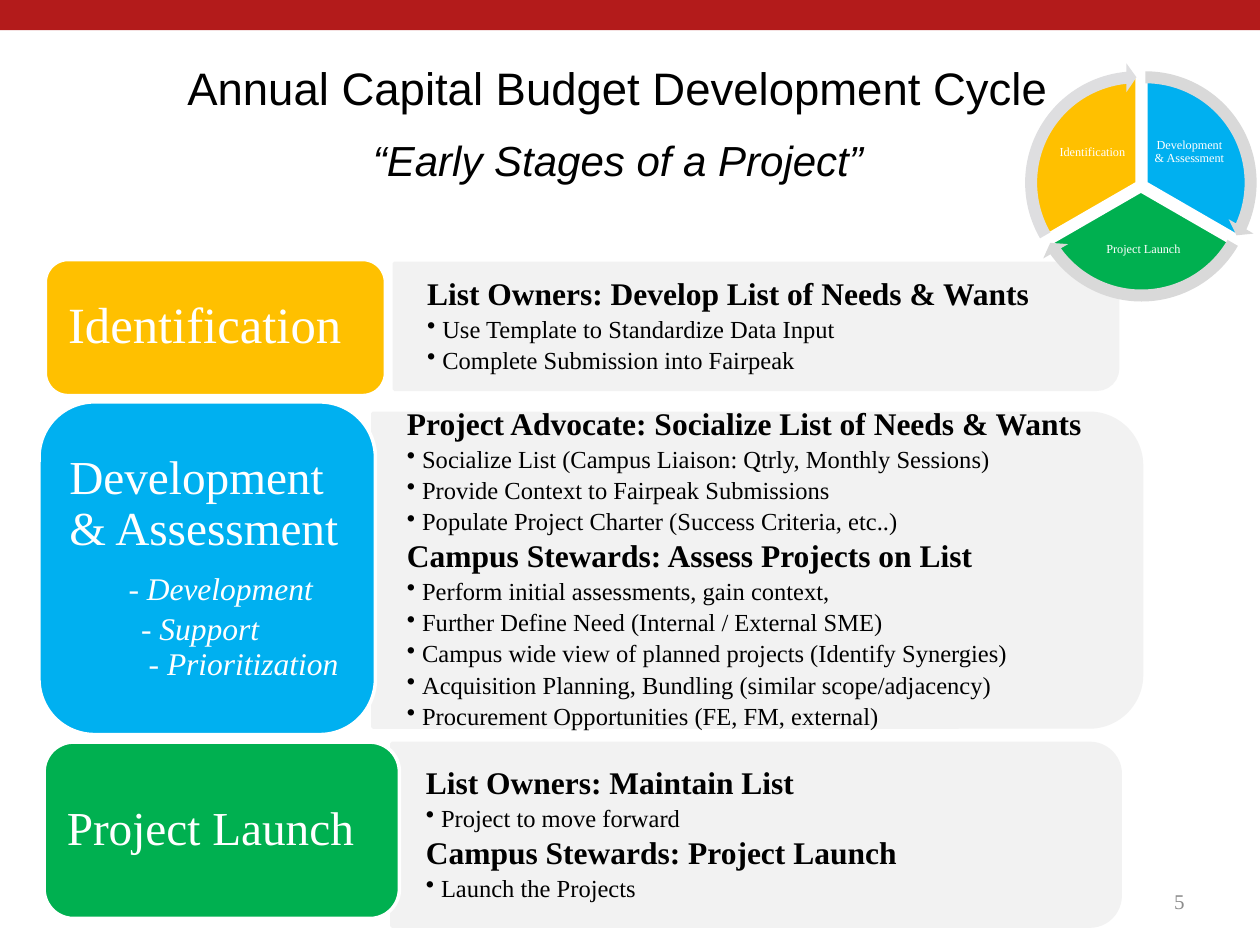
from lxml import etree
from pptx import Presentation
from pptx.dml.color import RGBColor
from pptx.enum.shapes import MSO_SHAPE
from pptx.enum.text import MSO_ANCHOR, PP_ALIGN
from pptx.oxml.ns import qn
from pptx.util import Inches, Pt

RECTANGLE = MSO_SHAPE.RECTANGLE
ROUNDED = MSO_SHAPE.ROUNDED_RECTANGLE
ROUND_SIDE = MSO_SHAPE.ROUND_2_SAME_RECTANGLE
SECTOR = MSO_SHAPE.PIE
ARC_ARROW = MSO_SHAPE.CIRCULAR_ARROW
TOP, MIDDLE = MSO_ANCHOR.TOP, MSO_ANCHOR.MIDDLE
LEFT, CENTER, RIGHT = PP_ALIGN.LEFT, PP_ALIGN.CENTER, PP_ALIGN.RIGHT

SERIF, SANS = "Times New Roman", "Arial"
WHITE, BLACK, PANEL = "FFFFFF", "000000", "F2F2F2"
YELLOW, BLUE, GREEN = "FFC000", "00B0F0", "00B050"

HEADING, BULLET = "heading", "bullet"
TEXT_STYLES = {
    HEADING: {"size": Pt(18), "bold": True},
    BULLET: {"size": Pt(14), "bold": False},
}

STAGES = [
    {
        "color": YELLOW,
        "panel": (3.13, 2.09, 5.74, 1), "details": (3.12, 2.14, 5.69, 0.9),
        "card": (0.36, 2.06, 2.7, 1.08), "label": (0.42, 2.11, 2.6, 0.97),
        "name": "Identification", "size": 29, "inset": 0.12, "steps": [],
        "lines": [
            (HEADING, "List Owners: Develop List of Needs & Wants"),
            (BULLET, "Use Template to Standardize Data Input"),
            (BULLET, "Complete Submission into Fairpeak"),
        ],
    },
    {
        "color": BLUE,
        "panel": (2.96, 3.28, 6.1, 2.49), "details": (2.96, 3.4, 5.98, 2.24),
        "card": (0.31, 3.19, 2.67, 2.64), "label": (0.44, 3.32, 2.41, 2.38),
        "name": "Development & Assessment", "size": 27, "inset": 0.11,
        "steps": [("Development", 0.47, 10), ("Support", 0.57, 3), ("Prioritization", 0.63, 1)],
        "lines": [
            (HEADING, "Project Advocate: Socialize List of Needs & Wants"),
            (BULLET, "Socialize List (Campus Liaison: Qtrly, Monthly Sessions)"),
            (BULLET, "Provide Context to Fairpeak Submissions"),
            (BULLET, "Populate Project Charter (Success Criteria, etc..)"),
            (HEADING, "Campus Stewards: Assess Projects on List"),
            (BULLET, "Perform initial assessments, gain context,"),
            (BULLET, "Further Define Need (Internal / External SME)"),
            (BULLET, "Campus wide view of planned projects (Identify Synergies)"),
            (BULLET, "Acquisition Planning, Bundling (similar scope/adjacency)"),
            (BULLET, "Procurement Opportunities (FE, FM, external)"),
        ],
    },
    {
        "color": GREEN,
        "panel": (3.11, 5.9, 5.78, 1.45), "details": (3.11, 5.97, 5.71, 1.31),
        "card": (0.35, 5.89, 2.82, 1.4), "label": (0.42, 5.96, 2.68, 1.26),
        "name": "Project Launch", "size": 27, "inset": 0.11, "steps": [],
        "lines": [
            (HEADING, "List Owners: Maintain List"),
            (BULLET, "Project to move forward"),
            (HEADING, "Campus Stewards: Project Launch"),
            (BULLET, "Launch the Projects"),
        ],
    },
]

SECTORS = [
    (8.25, 0.61, (162, 18), BLUE, "Development & Assessment", (9.14, 0.96, 0.6, 0.5)),
    (8.21, 0.67, (18, 90), GREEN, "Project Launch", (8.62, 1.76, 0.91, 0.44)),
    (8.18, 0.61, (90, 162), YELLOW, "Identification", (8.37, 0.96, 0.6, 0.5)),
]
ARROWS = [
    (8.14, 0.5, 14.73, 161.99, "D9D9D9"),
    (8.11, 0.56, 86.72, 18, "D9D9D9"),
    (8.07, 0.5, 158.73, 90, "DEDEE0"),
]


def rgb(value):
    """Turn a hex string into a colour."""
    return RGBColor.from_string(value)


def apply(target, values):
    """Set each named attribute on the target."""
    for name, value in values.items():
        setattr(target, name, value)


class SlideBuilder:
    """Hold the shared style and the current slide."""

    def __init__(self, page):
        """Keep the slide that receives the elements."""
        self.page = page
        self.line_width = Pt(2)

    def shape(self, kind, at, fill, line=None, adjustments=(), rotation=0):
        """Add a filled preset shape."""
        shape = self.page.shapes.add_shape(kind, *map(Inches, at))
        shape.shadow.inherit = False
        shape.rotation = rotation
        shape.fill.solid()
        shape.fill.fore_color.rgb = rgb(fill)
        if line:
            shape.line.color.rgb = rgb(line)
            shape.line.width = self.line_width
        else:
            shape.line.fill.background()
        for index, value in enumerate(adjustments):
            shape.adjustments[index] = value

    def panel(self, at):
        """Add a panel rounded on its right side."""
        left, top, width, height = at
        shift = (width - height) / 2
        turned = (left + shift, top - shift, height, width)
        self.shape(ROUND_SIDE, turned, PANEL, PANEL, rotation=90)

    def box(self, at, insets=(0.1, 0.05), anchor=MIDDLE):
        """Add an empty wrapping text box and return its frame."""
        frame = self.page.shapes.add_textbox(*map(Inches, at)).text_frame
        across, down = map(Inches, insets)
        apply(frame, {
            "word_wrap": True, "vertical_anchor": anchor,
            "margin_left": across, "margin_right": across,
            "margin_top": down, "margin_bottom": down,
        })
        return frame

    def para(self, frame, text, font, color=WHITE, indent=0, bullet=False, **layout):
        """Write the next paragraph of a frame."""
        first = frame.paragraphs[0]
        para = frame.add_paragraph() if first.runs else first
        apply(para, layout)
        if indent:
            properties = para._p.get_or_add_pPr()
            properties.set("marL", str(Inches(indent)))
            if bullet:
                properties.set("indent", str(-Inches(indent)))
                etree.SubElement(properties, qn("a:buChar")).set("char", "•")
        span = para.add_run()
        span.text = text
        apply(span.font, {"name": SERIF, **font})
        span.font.color.rgb = rgb(color)

    def details(self, at, lines):
        """Add the headings and bullets of a stage."""
        frame = self.box(at, (0.27, 0.14))
        for style, text in lines:
            bullet = style == BULLET
            self.para(frame, text, TEXT_STYLES[style], BLACK, 0.12 if bullet else 0,
                      bullet, line_spacing=0.9, space_after=Pt(2.7))

    def stage(self, stage):
        """Add one stage row with its panel and card."""
        self.panel(stage["panel"])
        self.details(stage["details"], stage["lines"])
        self.shape(ROUNDED, stage["card"], stage["color"], WHITE)
        frame = self.box(stage["label"], (stage["inset"], 0.06))
        self.para(frame, stage["name"], {"size": Pt(stage["size"])}, line_spacing=0.9)
        for text, indent, gap in stage["steps"]:
            self.para(frame, f"- {text}", {"size": Pt(18), "italic": True}, indent=indent,
                      line_spacing=0.9, space_before=Pt(gap))

    def wheel(self):
        """Add the cycle wheel with its labels and arrows."""
        for left, top, angles, color, name, label in SECTORS:
            self.shape(SECTOR, (left, top, 1.69, 1.69), color, WHITE, angles)
            frame = self.box(label, (0.01, 0.01))
            self.para(frame, name, {"size": Pt(7)}, alignment=CENTER, line_spacing=0.9)
        for left, top, end, start, color in ARROWS:
            self.shape(ARC_ARROW, (left, top, 1.9, 1.9), color,
                       adjustments=(0.05, 3.28, end, start, 0.06))

    def title(self):
        """Add the two title lines."""
        frame = self.box((1.22, 0.43, 7.37, 1.08), anchor=TOP)
        self.para(frame, "Annual Capital Budget Development Cycle",
                  {"name": SANS, "size": Pt(26)}, BLACK, alignment=CENTER)
        self.para(frame, "“Early Stages of a Project”",
                  {"name": SANS, "size": Pt(24), "italic": True}, BLACK,
                  alignment=CENTER, space_before=Pt(11))


def main():
    """Build and save the deck."""
    deck = Presentation()
    deck.slide_width, deck.slide_height = Inches(10), Inches(7.5)
    builder = SlideBuilder(deck.slides.add_slide(deck.slide_layouts[6]))
    builder.shape(RECTANGLE, (0, 0, 10, 0.24), "B31B1B")
    number = builder.box((7.17, 6.95, 2.33, 0.4))
    builder.para(number, "5", {"size": Pt(12)}, "8C8C8C", alignment=RIGHT)
    for stage in STAGES:
        builder.stage(stage)
    builder.wheel()
    builder.title()
    deck.save("out.pptx")


if __name__ == "__main__":
    main()
